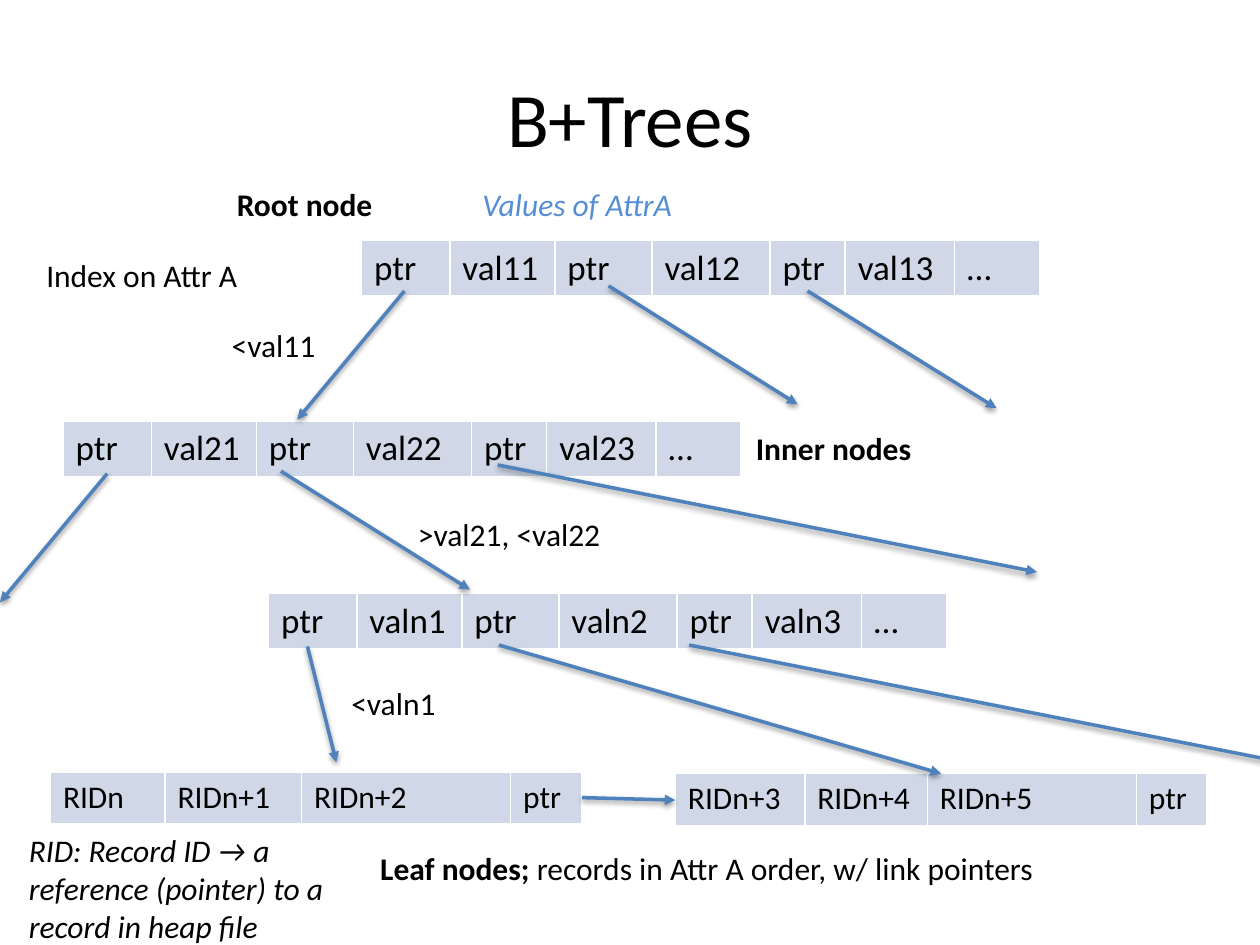
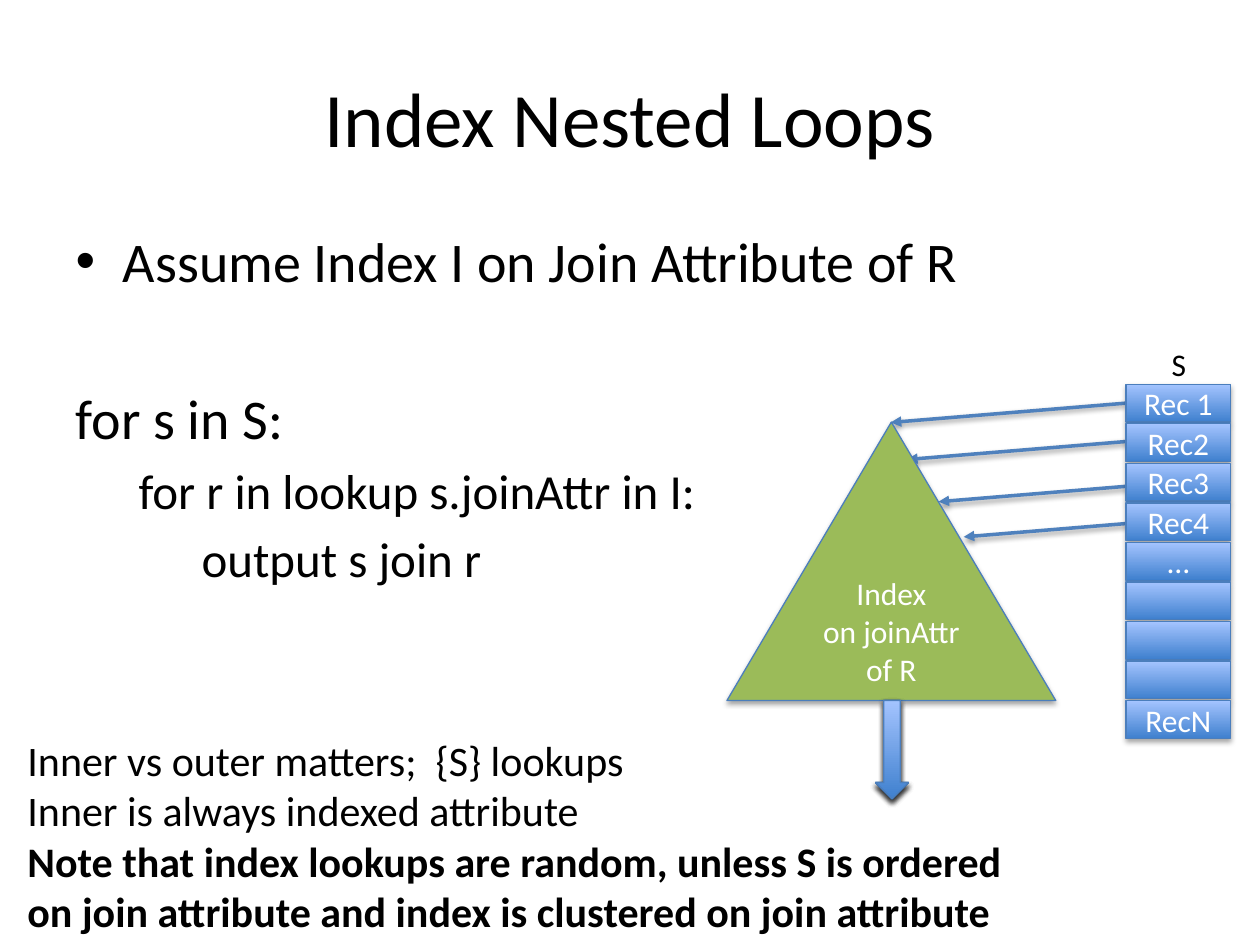
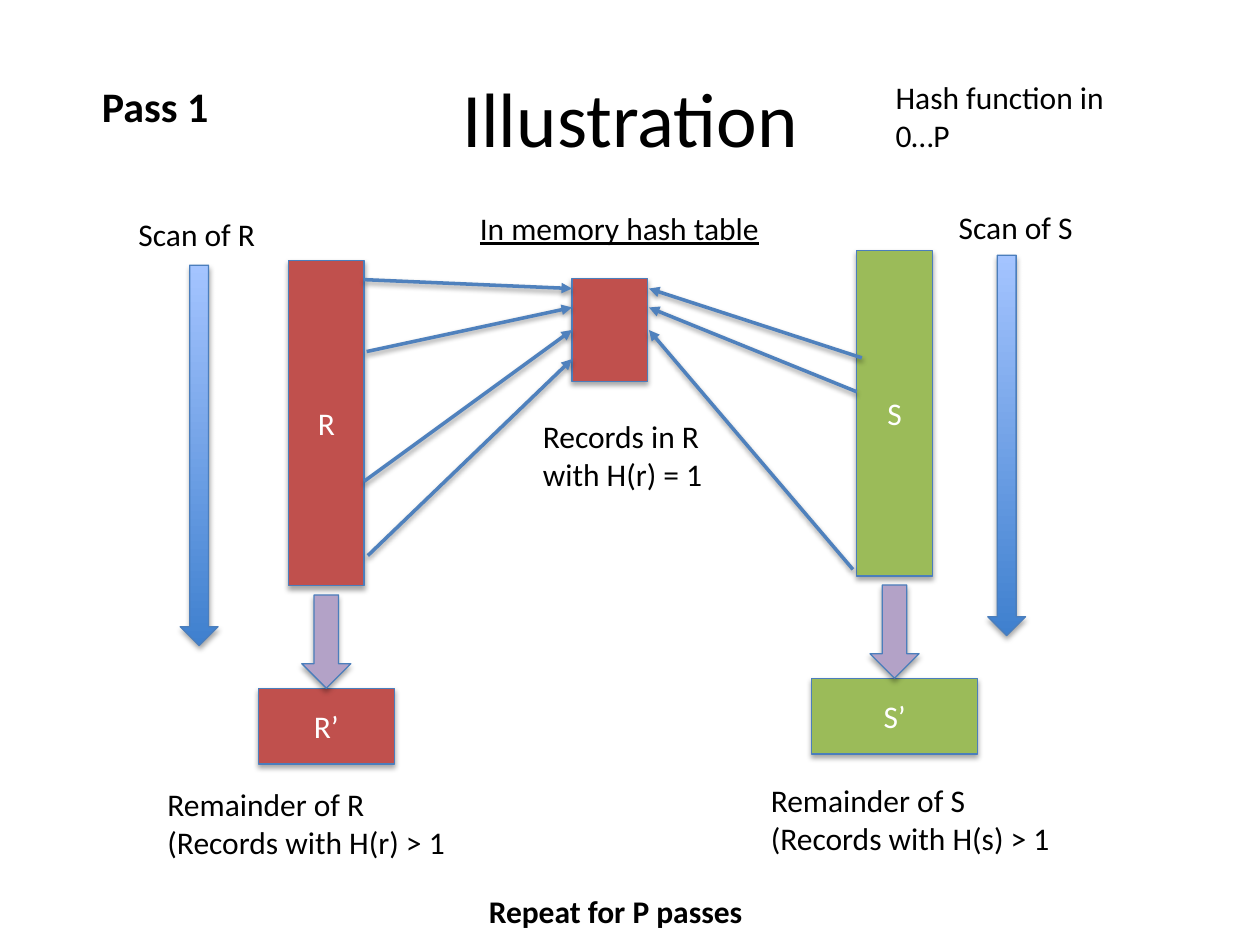
from dataclasses import dataclass

from lxml.etree import SubElement as Sub
from pptx import Presentation
from pptx.dml.color import RGBColor
from pptx.enum.shapes import MSO_CONNECTOR as Link, MSO_SHAPE as Form
from pptx.enum.text import MSO_ANCHOR as Anchor, MSO_AUTO_SIZE as Fit, PP_ALIGN as Align
from pptx.oxml.ns import qn
from pptx.util import Pt


@dataclass(frozen=True)
class Theme:
    font: str = "Calibri"
    black: str = "000000"
    white: str = "FFFFFF"
    cell: str = "D0D8E8"
    arrow: str = "4F81BD"
    edge: str = "4B7EBC"
    blue: str = "558ED5"
    red: str = "C0504D"
    green: str = "9BBB59"
    plum: str = "B3A2C7"
    shade: tuple = ("3F80CE", "A4C4FF")
    title: int = 44
    list: int = 32
    code: int = 28
    note: int = 24
    node: int = 20
    text: int = 18


def rgb(code):
    return RGBColor.from_string(code)


def box(x, y, w, h):
    return Pt(x), Pt(y), Pt(w), Pt(h)


class Deck:
    def __init__(self, theme):
        self.look = theme
        self.file = Presentation()
        self.file.slide_width, self.file.slide_height = Pt(720), Pt(540)

    def font(self, para, size, color=None, bold=None, italic=None):
        font = para.font
        font.name, font.size = self.look.font, Pt(size)
        font.color.rgb = rgb(color or self.look.black)
        font.bold, font.italic = bold, italic

    def place(self, shape, x, y, w, h):
        shape.left, shape.top, shape.width, shape.height = box(x, y, w, h)

    def slide(self, title, layout=5):
        self.page = self.file.slides.add_slide(self.file.slide_layouts[layout])
        self.items = self.page.shapes
        head = self.items.title
        self.place(head, 36, 21.6, 648, 90)
        frame = head.text_frame
        frame.text = title
        frame.vertical_anchor = Anchor.MIDDLE
        para = frame.paragraphs[0]
        para.alignment = Align.CENTER
        self.font(para, self.look.title)

    def body(self, lines):
        """Each line is (words, size, left indent or None for a bullet, gap)."""
        hold = self.page.placeholders[1]
        self.place(hold, 36, 126, 648, 356.4)
        frame = hold.text_frame
        frame.text = "\n".join(line[0] for line in lines)
        for para, (_, size, indent, gap) in zip(frame.paragraphs, lines):
            if indent is not None:
                props = para._p.get_or_add_pPr()
                props.set("marL", str(Pt(indent)))
                props.set("indent", "0")
                Sub(props, qn("a:buNone"))
            para.space_before = Pt(gap)
            self.font(para, size)

    def text(self, x, y, w, words, size=None, color=None, bold=None,
             italic=None, rows=1, wrap=True):
        size = size or self.look.text
        label = self.items.add_textbox(*box(x, y, w, rows * size * 1.2 + 7.2))
        frame = label.text_frame
        frame.word_wrap, frame.auto_size = wrap, Fit.SHAPE_TO_FIT_TEXT
        frame.text = words
        for para in frame.paragraphs:
            self.font(para, size, color, bold, italic)
        return frame.paragraphs

    def shadow(self, shape, alpha, gap):
        fx = Sub(shape._element.spPr, qn("a:effectLst"))
        cast = Sub(fx, qn("a:outerShdw"), blurRad=str(Pt(3.1)),
                   dist=str(Pt(gap)), dir="5400000", rotWithShape="0")
        tint = Sub(cast, qn("a:srgbClr"), val=self.look.black)
        Sub(tint, qn("a:alpha"), val=str(alpha * 1000))

    def shape(self, form, x, y, w, h, fill=None, words=""):
        """A shape without a fill colour gets the blue gradient."""
        item = self.items.add_shape(form, *box(x, y, w, h))
        if fill:
            item.fill.solid()
            item.fill.fore_color.rgb = rgb(fill)
        else:
            item.fill.gradient()
            item.fill.gradient_angle = 90
            for stop, color in zip(item.fill.gradient_stops, self.look.shade):
                stop.color.rgb = rgb(color)
        item.line.color.rgb = rgb(self.look.edge)
        item.line.width = Pt(0.75)
        self.shadow(item, 35, 1.8)
        if words:
            item.text_frame.text = words
            for para in item.text_frame.paragraphs:
                para.alignment = Align.CENTER
                self.font(para, self.look.text, self.look.white)

    def arrow(self, *ends):
        line = self.items.add_connector(Link.STRAIGHT, *box(*ends))
        line.line.color.rgb = rgb(self.look.arrow)
        line.line.width = Pt(2)
        Sub(line.line._get_or_add_ln(), qn("a:tailEnd"), type="triangle")
        self.shadow(line, 38, 1.6)

    def table(self, x, y, cols, words, size):
        table = self.items.add_table(1, len(cols), *box(x, y, sum(cols), 29.5)).table
        table.first_row = table.horz_banding = False
        for col, width, cell, word in zip(table.columns, cols, table.rows[0].cells, words):
            col.width = Pt(width)
            cell.text = word
            self.font(cell.text_frame.paragraphs[0], size)
            props = cell._tc.get_or_add_tcPr()
            for side in "LRTB":
                edge = Sub(props, qn("a:ln" + side), w=str(Pt(1)))
                Sub(Sub(edge, qn("a:solidFill")), qn("a:srgbClr"), val=self.look.white)
            cell.fill.solid()
            cell.fill.fore_color.rgb = rgb(self.look.cell)


def trees(deck):
    look = deck.look
    deck.slide("B+Trees")
    # Root and inner nodes
    cols = (50.5, 60, 55.5, 67.5, 43, 62.5, 48.5)
    for x, y, level in ((206.6, 137.5, "1"), (36, 240.5, "2"), (153.4, 339.1, "n")):
        words = [w for n in (1, 2, 3) for w in ("ptr", f"val{level}{n}")]
        deck.table(x, y, cols, words + ["…"], look.node)
    # Leaf nodes
    for x, y, first, cols in ((28.8, 441.4, ("RIDn", "RIDn+1", "RIDn+2"), (65.5, 78)),
                              (385.9, 442.1, ("RIDn+3", "RIDn+4", "RIDn+5"), (74, 70))):
        deck.table(x, y, cols + (119.5, 40.5), first + ("ptr",), look.text)
    # Pointers
    for ends in ((231.1, 166.3, 169.9, 239.8), (347.8, 163.4, 455.8, 231.1),
                 (461.5, 166.3, 569.5, 233.3), (61.2, 270.7, 0, 344.2),
                 (160.6, 269.3, 268.6, 337), (284.4, 265.7, 592.6, 326.9),
                 (175.7, 369.4, 192.2, 435.6), (285.1, 368.6, 537.8, 442.1),
                 (393.8, 368.6, 733, 435.6), (332.6, 455.8, 385.9, 457.2)):
        deck.arrow(*ends)
    # Labels
    deck.text(125.3, 182.9, 114.5, "<val11")
    deck.text(231.8, 290.9, 172.8, ">val21, <val22")
    deck.text(193.7, 387.4, 172.8, "<valn1")
    leaf = deck.text(210.2, 481.7, 437.8, "Leaf nodes; ")[0]
    leaf.runs[0].font.bold = True
    leaf.add_run().text = "records in Attr A order, w/ link pointers"
    deck.text(128.2, 102.2, 114.5, "Root node", bold=True)
    deck.text(424.8, 241.9, 114.5, "Inner nodes", bold=True)
    deck.text(19.4, 142.6, 125.3, "Index on Attr A", wrap=False)
    deck.text(9.4, 471.6, 182.9, "RID: Record ID → a reference (pointer) to a "
              "record in heap file", italic=True, rows=3)
    deck.text(268.6, 102.2, 125.3, "Values of AttrA", color=look.blue, italic=True)


def loops(deck):
    look = deck.look
    deck.slide("Index Nested Loops", layout=1)
    # Lookups run behind the index
    for x, y in ((643, 230.4), (652.3, 251.6), (670.3, 275.7), (684.7, 295.8)):
        deck.arrow(x, y, x - 134, y + 11)
    deck.body((("Assume Index I on Join Attribute of R", look.list, None, 6.4),
               ("for s in S:", look.list, 0, 51),
               ("for r in lookup s.joinAttr in I:", look.code, 36, 5.6),
               ("output s join r", look.code, 72, 5.6)))
    deck.shape(Form.ISOSCELES_TRIANGLE, 415.4, 241.2, 187.9, 159.1, look.green,
               "Index\non joinAttr of R")
    # Records of S
    names = ("Rec 1", "Rec2", "Rec3", "Rec4", "…", "", "", "", "RecN")
    for n, name in enumerate(names):
        deck.shape(Form.RECTANGLE, 643.5, 219.6 + 22.6 * n, 59.8, 21.6, words=name)
    deck.text(662.4, 193.7, 26.6, "S")
    # Stacked output arrows, one per lookup
    for _ in range(4):
        deck.shape(Form.DOWN_ARROW, 500.4, 400.3, 18.7, 56.2)
    notes = deck.text(8.6, 416.2, 586.8, "Inner vs outer matters;  {S} lookups\n"
                      "Inner is always indexed attribute\n"
                      "Note that index lookups are random, unless S is ordered on join "
                      "attribute and index is clustered on join attribute",
                      look.note, rows=4)
    notes[-1].font.bold = True


def passes(deck):
    look = deck.look
    deck.slide("Illustration")
    # Relations, their scans and remainders: x, width of remainder, top
    for name, color, x, wide, top, scan in (("R", look.red, 164.9, 77.8, 149, 103),
                                            ("S", look.green, 489.6, 95, 143.3, 564.5)):
        mid = x + 21.6
        deck.shape(Form.RECTANGLE, x, top, 43.2, 185.8, color, name)
        deck.shape(Form.RECTANGLE, mid - wide / 2, top + 244.4, wide, 43.2, color, name + "’")
        deck.shape(Form.DOWN_ARROW, mid - 14, top + 191, 28, 53.3, look.plum)
        deck.shape(Form.DOWN_ARROW, scan, top + 2.5, 21.6, 217.4)
    # Hash table and the records sent to it
    deck.shape(Form.RECTANGLE, 326.9, 159.1, 43.2, 59, look.red)
    slots = (164.9, 175.7, 188.6, 205.2)
    left = ((208.1, 159.8), (209.5, 200.9), (208.1, 275), (210.2, 317.5))
    right = ((492.5, 204.5), (489.6, 223.9), (487.4, 325.4))
    for goal, starts in ((326.9, left), (370.8, right)):
        for (x, y), slot in zip(starts, slots):
            deck.arrow(x, y, goal, slot)
    # Labels
    deck.text(504.7, 41, 153.4, "Hash function in 0…P", rows=2)
    deck.text(51.1, 42.5, 120.2, "Pass 1", look.note, bold=True)
    deck.text(303.1, 234.7, 116.6, "Records in R with H(r) = 1", rows=2)
    deck.text(72, 119.5, 116.6, "Scan of R")
    deck.text(540.7, 115.2, 116.6, "Scan of S")
    table = deck.text(267.1, 115.9, 182.2, "In memory hash table")
    table[0].font.underline = True
    deck.text(88.6, 445, 229.7, "Remainder of R\n(Records with H(r) > 1", rows=2)
    deck.text(433.4, 442.8, 198, "Remainder of S\n(Records with H(s) > 1", rows=2)
    deck.text(272.2, 506.2, 239, "Repeat for P passes", bold=True)


def main():
    deck = Deck(Theme())
    for build in (trees, loops, passes):
        build(deck)
    deck.file.save("out.pptx")


if __name__ == "__main__":
    main()
